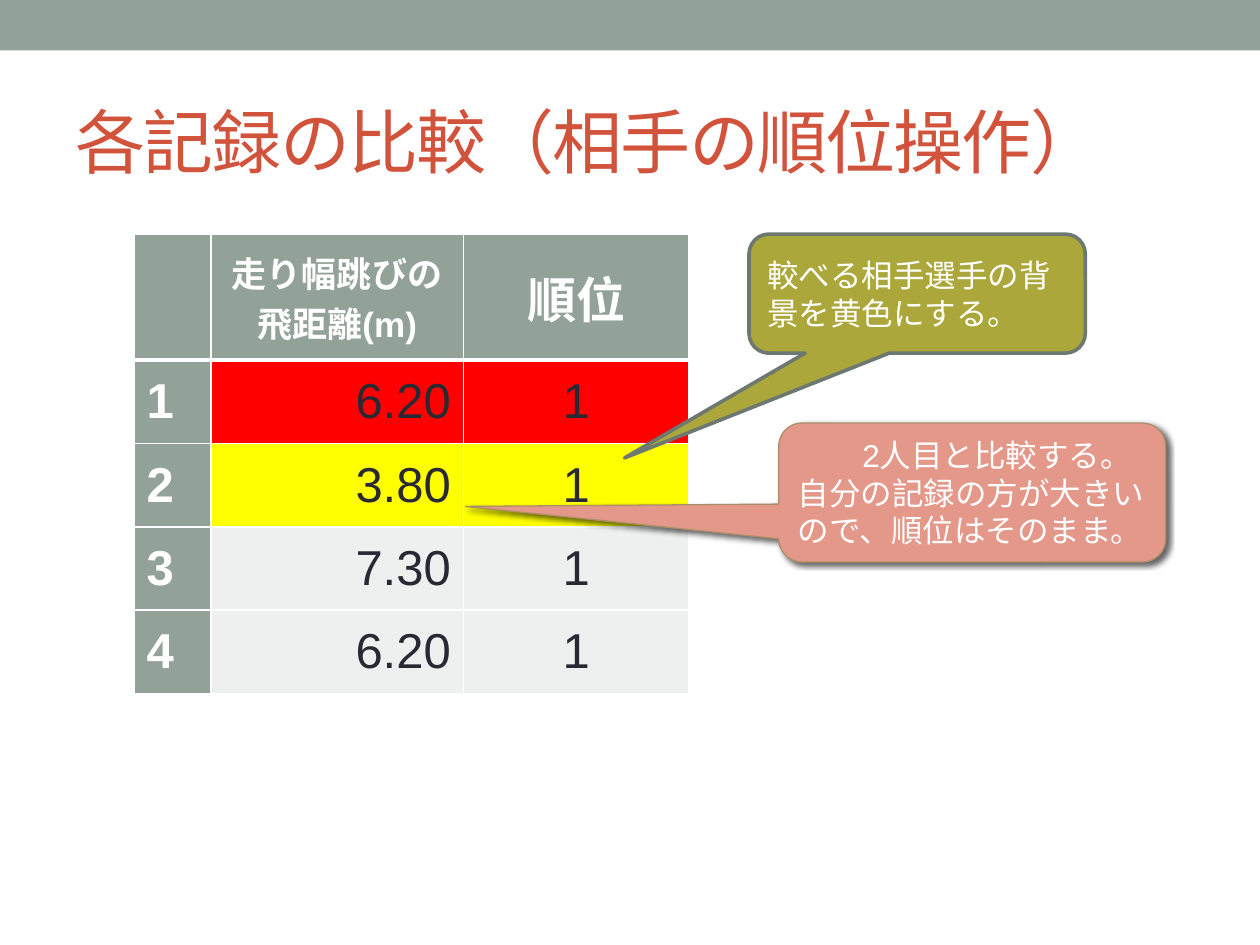
"""Build a slide that compares long jump records and explains the ranking step."""
from lxml import etree
from pptx import Presentation
from pptx import util as u
from pptx.dml.color import RGBColor
from pptx.enum import shapes, text
from pptx.oxml import ns

SAGE, WHITE, INK = "93A299", "FFFFFF", "292934"
RED, YELLOW, PALE = "FF0000", "FFFF00", "EEF0EF"
LEFT, CENTER, RIGHT = text.PP_ALIGN.LEFT, text.PP_ALIGN.CENTER, text.PP_ALIGN.RIGHT


def rgb(value):
    return RGBColor.from_string(value)


def add(parent, tag, **attrs):
    return etree.SubElement(parent, ns.qn(tag), attrs)


class Deck:
    def __init__(self, prs, font):
        self.prs, self.font = prs, font
        self.s = prs.slides.add_slide(prs.slide_layouts[5])

    def style(self, p, size, color, align=LEFT, bold=False):
        p.alignment = align
        p.font.name, p.font.size, p.font.bold = self.font, u.Pt(size), bold
        p.font.color.rgb = rgb(color)

    def shape(self, kind, box, fill, line=None, width=0):
        sp = self.s.shapes.add_shape(kind, *map(u.Cm, box))
        sp.shadow.inherit = False
        sp.fill.solid()
        sp.fill.fore_color.rgb = rgb(fill)
        if line:
            sp.line.color.rgb = rgb(line)
            sp.line.width = u.Pt(width)
        else:
            sp.line.fill.background()
        return sp

    def title(self, words, box, size, color):
        sp = self.s.shapes.title
        sp.left, sp.top, sp.width, sp.height = map(u.Cm, box)
        tf = sp.text_frame
        tf.text = words
        tf.vertical_anchor = text.MSO_ANCHOR.MIDDLE
        p = tf.paragraphs[0]
        self.style(p, size, color)
        p.runs[0].font._element.set("spc", "-100")

    def cell(self, cell, words, fill, size, color, align, bold, bottom):
        cell.fill.solid()
        cell.fill.fore_color.rgb = rgb(fill)
        cell.vertical_anchor = text.MSO_ANCHOR.MIDDLE
        cell.text_frame.text = words
        for p in cell.text_frame.paragraphs:
            self.style(p, size, color, align, bold)
        tc_pr = cell._tc.get_or_add_tcPr()
        sides = {"L": 1, "R": 1, "T": 1, "B": bottom}
        for i, (side, width) in enumerate(sides.items()):
            ln = etree.Element(ns.qn(f"a:ln{side}"), w=str(u.Pt(width)))
            add(add(ln, "a:solidFill"), "a:srgbClr", val=WHITE)
            tc_pr.insert(i, ln)

    def table(self, box, widths, heights, rows, fills):
        table = self.s.shapes.add_table(len(rows), len(widths), *map(u.Cm, box)).table
        table.first_col = True
        for column, width in zip(table.columns, widths):
            column.width = u.Cm(width)
        for row, height in zip(table.rows, heights):
            row.height = u.Cm(height)
        for i, row in enumerate(rows):
            for j, words in enumerate(row):
                head = i == 0 or j == 0
                align = CENTER if i == 0 else (LEFT, RIGHT, CENTER)[j]
                self.cell(table.cell(i, j), words, SAGE if head else fills[i - 1],
                          20 if (i, j) == (0, 1) else 28, WHITE if head else INK,
                          align, head, 1 if i else 3)

    def callout(self, words, box, tip, fill, line, width, indent=0, shadow=False):
        sp = self.shape(shapes.MSO_SHAPE.ROUNDED_RECTANGULAR_CALLOUT, box, fill, line, width)
        sp.adjustments[0], sp.adjustments[1] = tip
        if shadow:
            effects = sp._element.spPr.find(ns.qn("a:effectLst"))
            outer = add(effects, "a:outerShdw", blurRad=str(u.Pt(3)), dist=str(u.Pt(2)),
                        dir="2700000", algn="tl", rotWithShape="0")
            add(add(outer, "a:srgbClr", val="000000"), "a:alpha", val="60000")
        tf = sp.text_frame
        tf.word_wrap = True
        tf.vertical_anchor = text.MSO_ANCHOR.MIDDLE
        tf.text = words
        for p in tf.paragraphs:
            self.style(p, 18, WHITE)
        if indent:
            tf.paragraphs[0]._p.get_or_add_pPr().set("indent", str(u.Cm(indent)))


def main():
    prs = Presentation()
    prs.slide_width, prs.slide_height = u.Cm(25.4), u.Cm(19.05)
    deck = Deck(prs, "Arial")
    deck.shape(shapes.MSO_SHAPE.RECTANGLE, (0, 0, 25.4, 1.02), SAGE)
    deck.title("各記録の比較（相手の順位操作）", (1.27, 1.47, 22.86, 2.74), 40, "D2533C")
    records = ["6.20", "3.80", "7.30", "6.20"]
    rows = [["", "走り幅跳びの\n飛距離(m)", "順位"]]
    rows += [[str(n), record, "1"] for n, record in enumerate(records, 1)]
    deck.table((2.7, 4.72, 11.2, 9.27), (1.55, 5.09, 4.55), [2.54] + [1.68] * 4,
               rows, (RED, YELLOW, PALE, PALE))
    deck.callout("2人目と比較する。\n自分の記録の方が大きいので、順位はそのまま。",
                 (15.7, 8.53, 7.8, 2.8), (-1.31, 0.1), "E4988A", "AD8F67", 0.75,
                 indent=1.3, shadow=True)
    deck.callout("較べる相手選手の背景を黄色にする。", (15.1, 4.72, 6.78, 2.4),
                 (-0.87, 1.38), "ACA73B", "6D7871", 2.08)
    prs.save("out.pptx")


if __name__ == "__main__":
    main()
